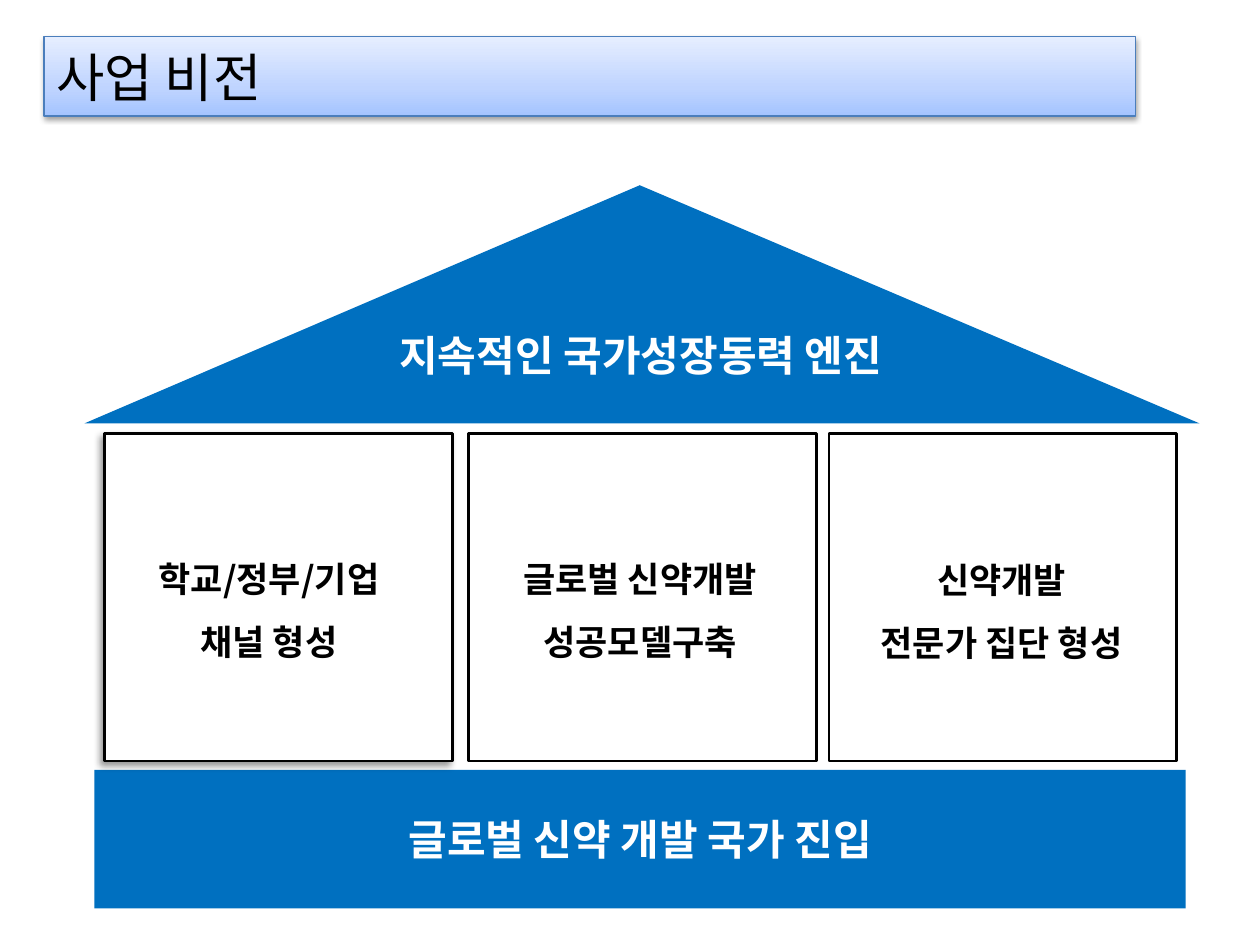
from dataclasses import dataclass
from typing import Any

from lxml import etree
from pptx import Presentation
from pptx.dml.color import RGBColor
from pptx.enum.shapes import MSO_SHAPE
from pptx.enum.text import MSO_ANCHOR, MSO_AUTO_SIZE, PP_ALIGN
from pptx.oxml.ns import qn
from pptx.util import Inches, Pt

RECT, ROOF = MSO_SHAPE.RECTANGLE, MSO_SHAPE.ISOSCELES_TRIANGLE
LEFT, CENTER = PP_ALIGN.LEFT, PP_ALIGN.CENTER
MIDDLE = MSO_ANCHOR.MIDDLE
GROW, FIXED = MSO_AUTO_SIZE.SHAPE_TO_FIT_TEXT, MSO_AUTO_SIZE.NONE

BLUE = RGBColor(0x00, 0x70, 0xC0)
EDGE = RGBColor(0x4B, 0x7E, 0xBC)
WHITE = RGBColor(0xFF, 0xFF, 0xFF)
BLACK = RGBColor(0x00, 0x00, 0x00)
STOPS = ((0, RGBColor(0xA4, 0xC4, 0xFF)),
         (35, RGBColor(0xBF, 0xD4, 0xFF)),
         (100, RGBColor(0xE6, 0xEE, 0xFF)))
FONT = "Noto Sans CJK KR"
HEAD = {"size": Pt(30), "bold": False, "name": FONT}
BAND = {"size": Pt(24), "bold": True, "name": FONT}
BODY = {"size": Pt(20), "bold": True, "name": FONT}


@dataclass
class Box:
    x: float
    y: float
    w: float
    h: float

    def place(self) -> tuple:
        return tuple(Inches(n) for n in (self.x, self.y, self.w, self.h))


@dataclass
class Pillar:
    x: float
    text: Box
    lines: tuple[str, ...]
    pads: tuple[float, ...]
    shade: bool = False


def add_stop(group: Any, tag: str, color: RGBColor, **attrs: str) -> Any:
    node = etree.SubElement(group, qn(tag), attrs)
    return etree.SubElement(node, qn("a:srgbClr"), val=str(color))


def add_shade(shape: Any, blur: float, dist: float, turn: int, alpha: int) -> None:
    shape.shadow.inherit = False
    group = shape._element.spPr.find(qn("a:effectLst"))
    tone = add_stop(group, "a:outerShdw", BLACK, blurRad=str(Pt(blur)),
                    dist=str(Pt(dist)), dir=str(turn * 60000), rotWithShape="0")
    etree.SubElement(tone, qn("a:alpha"), val=str(alpha * 1000))


def add_block(slide: Any, kind: Any, box: Box, fill: RGBColor,
              line: RGBColor | None = None) -> Any:
    shape = slide.shapes.add_shape(kind, *box.place())
    shape.shadow.inherit = False
    shape.fill.solid()
    shape.fill.fore_color.rgb = fill
    if line is None:
        shape.line.fill.background()
    else:
        shape.line.color.rgb = line
        shape.line.width = Pt(1.5)
    return shape


def write(shape: Any, lines: tuple[str, ...], style: dict, color: RGBColor,
          align: Any = CENTER, gap: float = 1.0,
          pads: tuple[float, ...] = (0,)) -> None:
    frame = shape.text_frame
    frame.word_wrap = True
    frame.text = "\n".join(lines)
    for part, pad in zip(frame.paragraphs, pads):
        part.alignment = align
        part.line_spacing = gap
        if pad:
            part._p.get_or_add_pPr().set("marR", str(Inches(pad)))
        for run in part.runs:
            for key, value in style.items():
                setattr(run.font, key, value)
            run.font.color.rgb = color
            etree.SubElement(run.font._element, qn("a:ea"), typeface=FONT)


def add_label(slide: Any, box: Box, lines: tuple[str, ...], style: dict,
              color: RGBColor, **opts: Any) -> None:
    label = slide.shapes.add_textbox(*box.place())
    write(label, lines, style, color, **opts)
    label.text_frame.auto_size = GROW


def set_title(slide: Any, box: Box, text: str) -> None:
    title = slide.shapes.title
    title.left, title.top, title.width, title.height = box.place()
    title.fill.gradient()
    title.fill.gradient_angle = 90
    group = title._element.spPr.find(".//" + qn("a:gsLst"))
    for node in list(group):
        group.remove(node)
    for pos, color in STOPS:
        add_stop(group, "a:gs", color, pos=str(pos * 1000))
    title.line.color.rgb = EDGE
    title.line.width = Pt(0.75)
    add_shade(title, 3.1, 1.6, 90, 38)
    write(title, (text,), HEAD, BLACK, align=LEFT)
    title.text_frame.auto_size = FIXED
    title.text_frame.vertical_anchor = MIDDLE


PILLARS = (
    Pillar(0.83, Box(0.85, 4.21, 2.73, 1.03),
           ("학교/정부/기업", "채널 형성"), (0.16, 0), True),
    Pillar(3.72, Box(3.74, 4.21, 2.76, 1.11),
           ("글로벌 신약개발", "성공모델구축"), (0.08, 0)),
    Pillar(6.58, Box(6.6, 4.22, 2.7, 1.11),
           ("신약개발\v전문가 집단 형성",), (0,)),
)


def main() -> None:
    deck = Presentation()
    deck.slide_width, deck.slide_height = Inches(10), Inches(7.5)
    slide = deck.slides.add_slide(deck.slide_layouts[5])
    set_title(slide, Box(0.35, 0.29, 8.66, 0.63), "사업 비전")

    roof = add_block(slide, ROOF, Box(0.67, 1.47, 8.85, 1.89), BLUE)
    roof.adjustments[0] = 0.498
    add_label(slide, Box(2.17, 2.57, 5.83, 0.5),
              ("지속적인 국가성장동력 엔진",), BAND, WHITE)

    base = add_block(slide, RECT, Box(0.75, 6.11, 8.66, 1.1), BLUE)
    write(base, ("글로벌 신약 개발 국가 진입",), BAND, WHITE)
    base.text_frame.vertical_anchor = MIDDLE

    for item in PILLARS:
        block = add_block(slide, RECT, Box(item.x, 3.44, 2.76, 2.6), WHITE, BLACK)
        if item.shade:
            add_shade(block, 4, 3, 135, 40)
        add_label(slide, item.text, item.lines, BODY, BLACK,
                  gap=1.5, pads=item.pads)

    deck.save("out.pptx")


if __name__ == "__main__":
    main()
